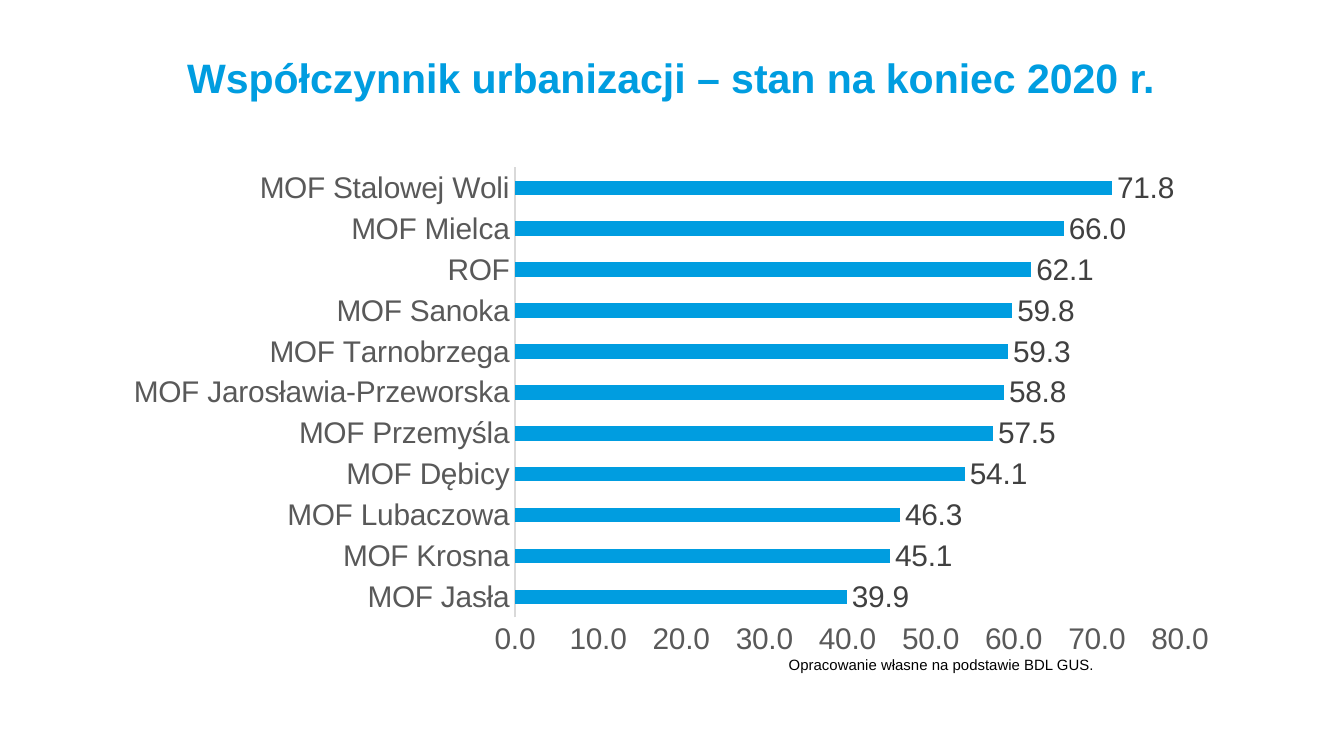
"""Build a slide with a bar chart of urbanization rates."""
from typing import Any, NamedTuple

from pptx import Presentation
from pptx.chart.data import CategoryChartData
from pptx.dml.color import RGBColor
from pptx.enum.chart import XL_CHART_TYPE, XL_LABEL_POSITION, XL_TICK_MARK
from pptx.enum.text import MSO_ANCHOR, PP_ALIGN
from pptx.util import Inches, Pt

BLUE = "009DE0"
AXIS_GRAY = "595959"
PAGE_WIDTH = Inches(10)
PAGE_HEIGHT = PAGE_WIDTH * 9 // 16


class Area(NamedTuple):
    left: float
    top: float
    width: float
    height: float


class Rate(NamedTuple):
    region: str
    percent: float


RATES = [
    Rate("MOF Jasła", 39.9),
    Rate("MOF Krosna", 45.1),
    Rate("MOF Lubaczowa", 46.3),
    Rate("MOF Dębicy", 54.1),
    Rate("MOF Przemyśla", 57.5),
    Rate("MOF Jarosławia-Przeworska", 58.8),
    Rate("MOF Tarnobrzega", 59.3),
    Rate("MOF Sanoka", 59.8),
    Rate("ROF", 62.1),
    Rate("MOF Mielca", 66.0),
    Rate("MOF Stalowej Woli", 71.8),
]


def color(value: str) -> RGBColor:
    return RGBColor.from_string(value)


def apply(target: Any, values: dict[str, Any]) -> None:
    for name, value in values.items():
        setattr(target, name, value)


def lengths(area: Area) -> list[int]:
    return [Inches(value) for value in area]


def style_font(font: Any, size: int, fill: str, bold: bool = False) -> None:
    apply(font, {"name": "Arial", "size": Pt(size), "bold": bold})
    font.color.rgb = color(fill)


def fill_title(title: Any, text: str, area: Area) -> None:
    apply(title, dict(zip(area._fields, lengths(area))))
    frame = title.text_frame
    apply(frame, {
        "margin_left": 0, "margin_top": 0, "margin_right": 0, "margin_bottom": 0,
        "vertical_anchor": MSO_ANCHOR.TOP, "word_wrap": True,
    })
    para = frame.paragraphs[0]
    para.alignment = PP_ALIGN.CENTER
    span = para.add_run()
    span.text = text
    style_font(span.font, 22, BLUE, bold=True)


def add_note(page: Any, text: str, area: Area) -> None:
    frame = page.shapes.add_textbox(*lengths(area)).text_frame
    frame.word_wrap = True
    span = frame.paragraphs[0].add_run()
    span.text = text
    style_font(span.font, 8, "000000")


def style_axis(axis: Any) -> None:
    apply(axis, {
        "has_major_gridlines": False,
        "major_tick_mark": XL_TICK_MARK.NONE,
        "minor_tick_mark": XL_TICK_MARK.NONE,
    })
    style_font(axis.tick_labels.font, 16, AXIS_GRAY)


def add_rate_chart(page: Any, rates: list[Rate], area: Area) -> None:
    data = CategoryChartData(number_format="0.0")
    data.categories = [rate.region for rate in rates]
    data.add_series("Series 1", [rate.percent for rate in rates])
    chart = page.shapes.add_chart(
        XL_CHART_TYPE.BAR_CLUSTERED, *lengths(area), data
    ).chart
    apply(chart, {"has_legend": False, "has_title": False})
    style_font(chart.font, 16, "000000")

    for axis in (chart.category_axis, chart.value_axis):
        style_axis(axis)
    category_line = chart.category_axis.format.line
    category_line.width = Pt(0.75)
    category_line.color.rgb = color("D9D9D9")
    chart.value_axis.format.line.fill.background()
    apply(chart.value_axis, {"minimum_scale": 0, "maximum_scale": 80, "major_unit": 10})
    number_format = {"number_format": "0.0", "number_format_is_linked": False}
    apply(chart.value_axis.tick_labels, number_format)

    plot = chart.plots[0]
    apply(plot, {"gap_width": 182, "vary_by_categories": False})
    series = plot.series[0]
    series.format.fill.solid()
    series.format.fill.fore_color.rgb = color(BLUE)
    labels = series.data_labels
    apply(labels, {
        "show_value": True, "position": XL_LABEL_POSITION.OUTSIDE_END, **number_format,
    })
    style_font(labels.font, 16, "404040")


def main() -> None:
    deck = Presentation()
    apply(deck, {"slide_width": PAGE_WIDTH, "slide_height": PAGE_HEIGHT})
    page = deck.slides.add_slide(deck.slide_layouts.get_by_name("Title Only"))
    fill_title(
        page.shapes.title,
        "Współczynnik urbanizacji – stan na koniec 2020 r.",
        Area(0.83, 0.39, 8.33, 0.89),
    )
    add_rate_chart(page, RATES, Area(0.83, 1.17, 8.33, 3.78))
    add_note(
        page,
        "Opracowanie własne na podstawie BDL GUS.",
        Area(5.77, 4.83, 3.54, 0.24),
    )
    deck.save("out.pptx")


if __name__ == "__main__":
    main()
